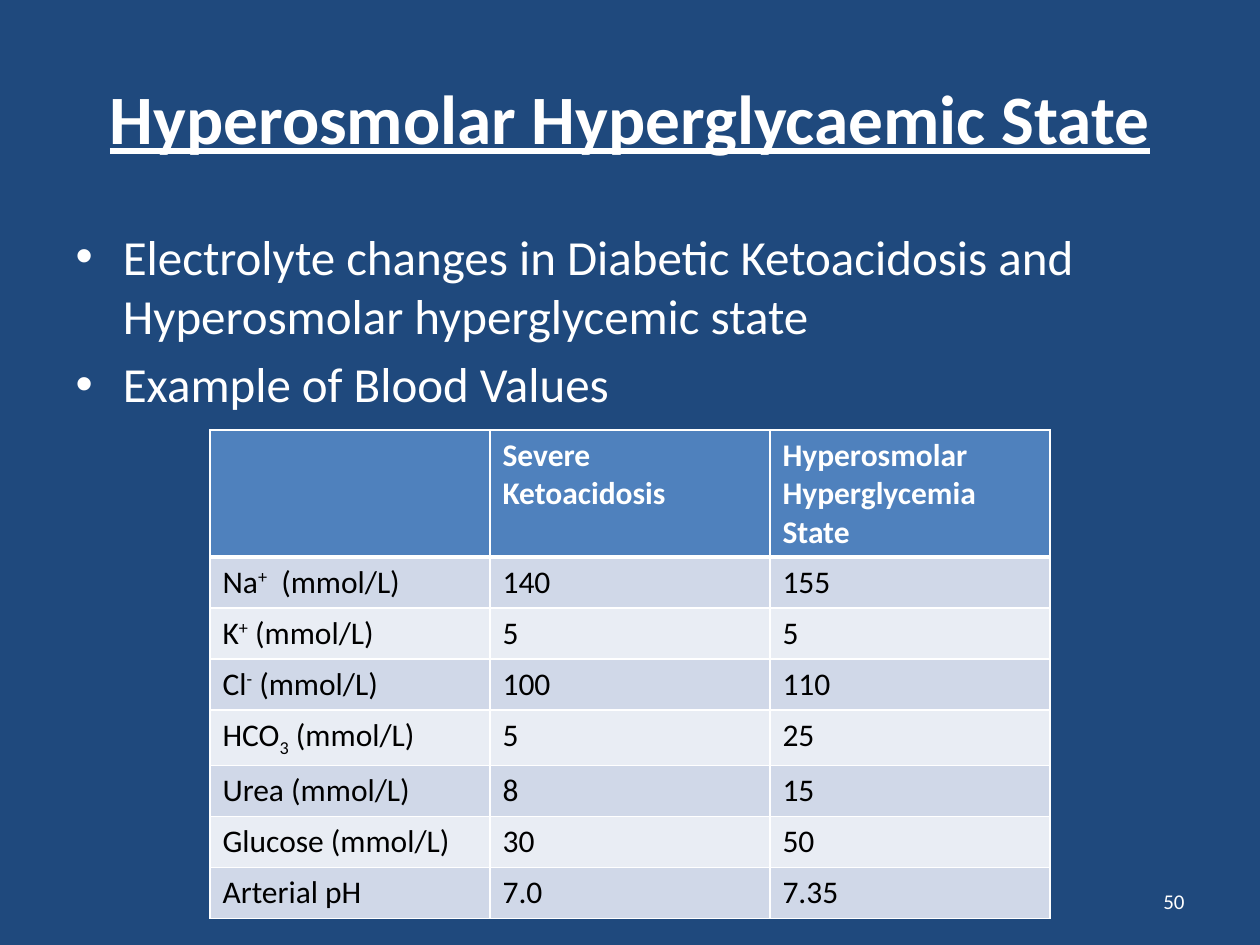
import lxml.etree
import pptx
import pptx.dml.color
import pptx.enum.text
import pptx.oxml.ns
import pptx.util

RGBColor = pptx.dml.color.RGBColor
NAVY = RGBColor(0x1F, 0x49, 0x7D)
BLUE = RGBColor(0x4F, 0x81, 0xBD)
BAND_DARK = RGBColor(0xD0, 0xD8, 0xE8)
BAND_LIGHT = RGBColor(0xE9, 0xED, 0xF4)
WHITE = RGBColor(0xFF, 0xFF, 0xFF)
BLACK = RGBColor(0x00, 0x00, 0x00)

FONT = "Calibri"
PX_PER_INCH = 126
SUPERSCRIPT, SUBSCRIPT = 30000, -25000

HEADINGS = ["", "Severe Ketoacidosis", "Hyperosmolar Hyperglycemia State"]
# Each label is a list of (text, baseline) parts
BLOOD_VALUES = [
    ([("Na", 0), ("+", SUPERSCRIPT), ("  (mmol/L)", 0)], "140", "155"),
    ([("K", 0), ("+", SUPERSCRIPT), (" (mmol/L)", 0)], "5", "5"),
    ([("Cl", 0), ("-", SUPERSCRIPT), (" (mmol/L)", 0)], "100", "110"),
    ([("HCO", 0), ("3", SUBSCRIPT), (" (mmol/L)", 0)], "5", "25"),
    ([("Urea (mmol/L)", 0)], "8", "15"),
    ([("Glucose (mmol/L)", 0)], "30", "50"),
    ([("Arterial pH", 0)], "7.0", "7.35"),
]


def px(length):
    return pptx.util.Emu(round(length * 914400 / PX_PER_INCH))


def place(shape, box):
    shape.left, shape.top, shape.width, shape.height = map(px, box)


def style(paragraph, size, color, bold=False, underline=False):
    for run in paragraph.runs:
        run.font.name = FONT
        run.font.size = pptx.util.Pt(size)
        run.font.color.rgb = color
        run.font.bold = bold
        run.font.underline = underline


def add_title(slide, box, text):
    title = slide.shapes.title
    place(title, box)
    title.text_frame.text = text
    title.text_frame.vertical_anchor = pptx.enum.text.MSO_ANCHOR.MIDDLE
    heading = title.text_frame.paragraphs[0]
    heading.alignment = pptx.enum.text.PP_ALIGN.CENTER
    style(heading, 39.6, WHITE, bold=True, underline=True)


def add_bullets(slide, box, points):
    body = slide.placeholders[1]
    place(body, box)
    body.text_frame.text = "\n".join(points)
    for point in body.text_frame.paragraphs:
        style(point, 28, WHITE)


def add_slide_number(slide, box, number):
    footer = slide.shapes.add_textbox(*map(px, box)).text_frame
    footer.word_wrap = True
    footer.vertical_anchor = pptx.enum.text.MSO_ANCHOR.MIDDLE
    footer.text = number
    footer.paragraphs[0].alignment = pptx.enum.text.PP_ALIGN.RIGHT
    style(footer.paragraphs[0], 12, WHITE)


def set_borders(cell, widths):
    """Draw white borders; widths gives points for left, right, top, bottom."""
    qn = pptx.oxml.ns.qn
    properties = cell._tc.get_or_add_tcPr()
    for position, (side, width) in enumerate(zip("LRTB", widths)):
        line = lxml.etree.Element(qn(f"a:ln{side}"), w=str(pptx.util.Pt(width)))
        fill = lxml.etree.SubElement(line, qn("a:solidFill"))
        lxml.etree.SubElement(fill, qn("a:srgbClr"), val=str(WHITE))
        properties.insert(position, line)


def fill_cell(cell, parts, color, background, bold, widths):
    paragraph = cell.text_frame.paragraphs[0]
    for text, baseline in parts:
        run = paragraph.add_run()
        run.text = text
        if baseline:
            run._r.get_or_add_rPr().set("baseline", str(baseline))
    style(paragraph, 18, color, bold)
    cell.fill.solid()
    cell.fill.fore_color.rgb = background
    set_borders(cell, widths)


def add_blood_table(slide, box, header_height):
    left, top, width, height = box
    row_count, column_count = len(BLOOD_VALUES) + 1, len(HEADINGS)
    table = slide.shapes.add_table(row_count, column_count, *map(px, box)).table
    for column in table.columns:
        column.width = px(width / column_count)
    for row in table.rows:
        row.height = px((height - header_height) / len(BLOOD_VALUES))
    table.rows[0].height = px(header_height)

    # Header row, with a heavier rule below it
    for column, heading in enumerate(HEADINGS):
        parts = [(heading, 0)] if heading else []
        fill_cell(table.cell(0, column), parts, WHITE, BLUE, True, (1, 1, 1, 3))

    # Banded value rows
    for row, (label, *values) in enumerate(BLOOD_VALUES, start=1):
        background = BAND_DARK if row % 2 else BAND_LIGHT
        widths = (1, 1, 3 if row == 1 else 1, 1)
        for column, parts in enumerate([label] + [[(value, 0)] for value in values]):
            fill_cell(table.cell(row, column), parts, BLACK, background, False, widths)


def main():
    deck = pptx.Presentation()
    deck.slide_width, deck.slide_height = px(1260), px(945)
    slide = deck.slides.add_slide(deck.slide_layouts[1])
    slide.background.fill.solid()
    slide.background.fill.fore_color.rgb = NAVY

    add_title(slide, (63, 38, 1134, 157), "Hyperosmolar Hyperglycaemic State")
    add_bullets(slide, (63, 220, 1134, 624), [
        "Electrolyte changes in Diabetic Ketoacidosis and Hyperosmolar hyperglycemic state",
        "Example of Blood Values",
    ])
    add_slide_number(slide, (903, 876, 294, 50), "50")
    add_blood_table(slide, (210, 430, 840, 484), header_height=127)
    deck.save("out.pptx")


if __name__ == "__main__":
    main()
